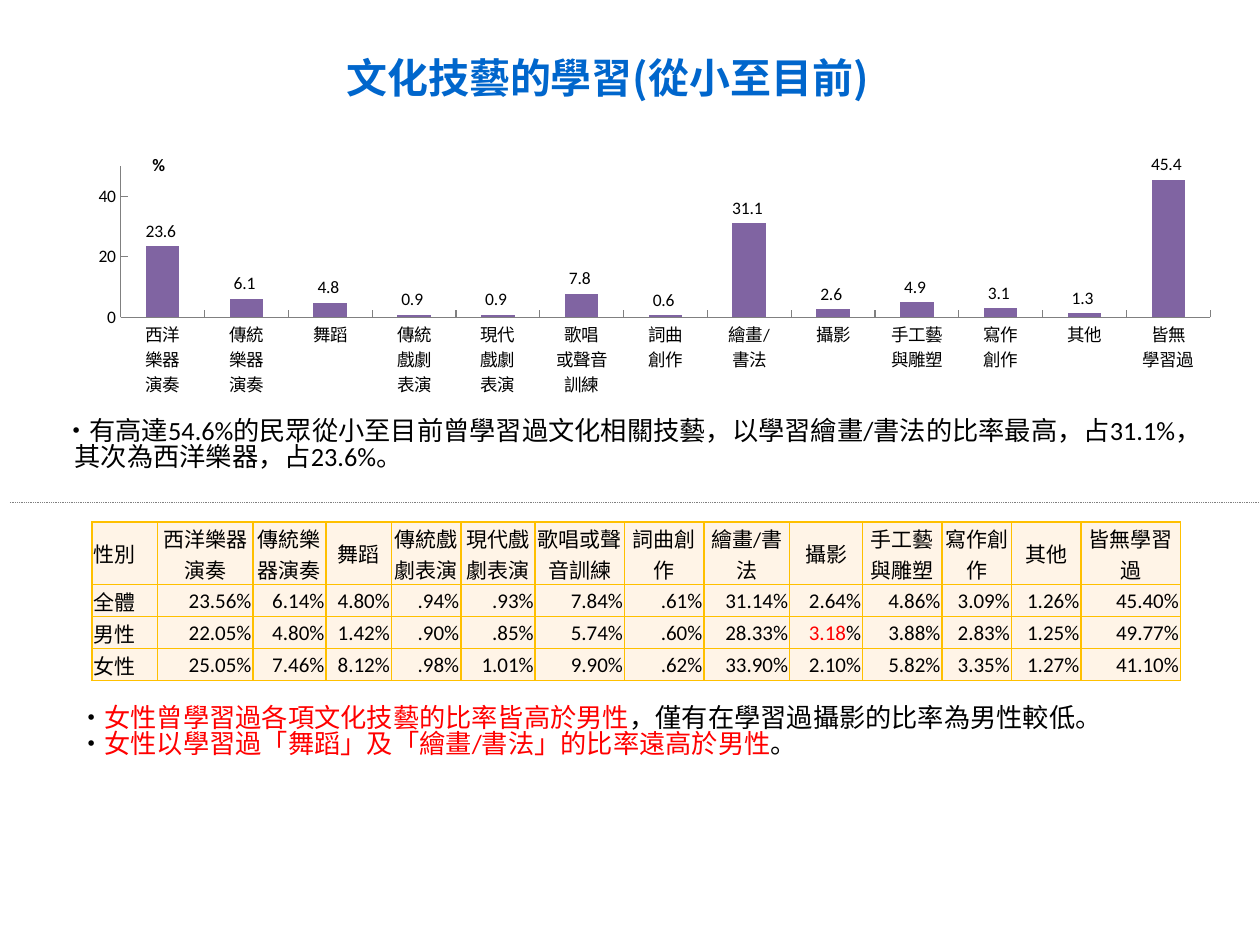
from lxml.etree import SubElement
from pptx import Presentation
from pptx.chart.data import CategoryChartData
from pptx.dml.color import RGBColor
from pptx.enum.chart import XL_CHART_TYPE as ChartType, XL_TICK_MARK as Tick
from pptx.enum.chart import XL_LABEL_POSITION as LabelPosition
from pptx.enum.dml import MSO_LINE as Dash
from pptx.enum.shapes import MSO_CONNECTOR as Connector
from pptx.enum.text import MSO_ANCHOR as Anchor, MSO_AUTO_SIZE as AutoSize, PP_ALIGN as Align
from pptx.oxml import parse_xml
from pptx.oxml.ns import nsdecls, qn
from pptx.util import Cm, Pt

BODY_FONT, TITLE_FONT = "Calibri", "Noto Sans CJK SC"
BLACK, RED, BLUE, PURPLE = "000000", "FF0000", "0066CC", "8064A2"
GREY, GOLD, CREAM = "808080", "FFC000", "FFF4E7"

SKILL_SHARES = {
    "西洋\n樂器\n演奏": 23.6, "傳統\n樂器\n演奏": 6.1, "舞蹈": 4.8,
    "傳統\n戲劇\n表演": 0.9, "現代\n戲劇\n表演": 0.9, "歌唱\n或聲音\n訓練": 7.8,
    "詞曲\n創作": 0.6, "繪畫/\n書法": 31.1, "攝影": 2.6, "手工藝\n與雕塑": 4.9,
    "寫作\n創作": 3.1, "其他": 1.3, "皆無\n學習過": 45.4,
}
GENDER_ROWS = [
    ["性別", "西洋樂器演奏", "傳統樂器演奏", "舞蹈", "傳統戲劇表演", "現代戲劇表演",
     "歌唱或聲音訓練", "詞曲創作", "繪畫/書法", "攝影", "手工藝與雕塑", "寫作創作",
     "其他", "皆無學習過"],
    ["全體", "23.56%", "6.14%", "4.80%", ".94%", ".93%", "7.84%", ".61%", "31.14%",
     "2.64%", "4.86%", "3.09%", "1.26%", "45.40%"],
    ["男性", "22.05%", "4.80%", "1.42%", ".90%", ".85%", "5.74%", ".60%", "28.33%",
     [("3.18", RED), ("%", BLACK)], "3.88%", "2.83%", "1.25%", "49.77%"],
    ["女性", "25.05%", "7.46%", "8.12%", ".98%", "1.01%", "9.90%", ".62%", "33.90%",
     "2.10%", "5.82%", "3.35%", "1.27%", "41.10%"],
]
COLUMN_WIDTHS = [1.32, 1.93, 1.47, 1.32, 1.4, 1.5, 1.8, 1.6, 1.73, 1.47, 1.6, 1.4, 1.4, 2.01]
ROW_HEIGHTS = [0.86, 0.43, 0.43, 0.43]


def rgb(color):
    return RGBColor.from_string(color)


def style_font(font, size, color=BLACK, name=BODY_FONT, bold=False):
    font.size, font.name, font.bold = Pt(size), name, bold
    font.color.rgb = rgb(color)


def write_text(para, text, align=None, color=BLACK, **style):
    """Fill a paragraph with a string or with (text, color) spans."""
    para.alignment = align
    for words, span_color in [(text, color)] if isinstance(text, str) else text:
        span = para.add_run()
        span.text = words
        style_font(span.font, color=span_color, **style)


def place(box, left, top, width, height):
    box.left, box.top, box.width, box.height = Cm(left), Cm(top), Cm(width), Cm(height)
    frame = box.text_frame
    frame.word_wrap, frame.auto_size = True, AutoSize.NONE
    return frame


def fill_title(box):
    frame = place(box, 3.76, 0.91, 16.97, 1.27)
    frame.vertical_anchor = Anchor.MIDDLE
    write_text(frame.paragraphs[0], "文化技藝的學習(從小至目前)", align=Align.CENTER,
               color=BLUE, size=23.4, name=TITLE_FONT, bold=True)


def fill_findings(box, position, findings):
    """Write hanging paragraphs that carry their own bullet sign."""
    frame = place(box, *position)
    for number, (text, align) in enumerate(findings):
        para = frame.add_paragraph() if number else frame.paragraphs[0]
        para.line_spacing, para.space_before = 0.82, Pt(0)
        write_text(para, text, align=align, size=15)
        props = para._p.get_or_add_pPr()
        props.set("marL", str(Cm(0.23)))
        props.set("indent", str(Cm(-0.23)))
        SubElement(props, qn("a:buNone"))


def set_layout(parent, index, **values):
    """Give a chart part a manual layout in fractions of the chart."""
    for old in parent.findall(qn("c:layout")):
        parent.remove(old)
    tags = "".join(f'<c:{tag} val="{value}"/>' for tag, value in values.items())
    parent.insert(index, parse_xml(
        f'<c:layout {nsdecls("c")}><c:manualLayout>{tags}</c:manualLayout></c:layout>'))


def add_share_chart(page):
    data = CategoryChartData()
    data.categories = list(SKILL_SHARES)
    data.add_series("Series 1", list(SKILL_SHARES.values()))
    chart = page.shapes.add_chart(ChartType.COLUMN_CLUSTERED, Cm(1.4), Cm(2.92),
                                  Cm(23.01), Cm(5.13), data).chart
    chart.has_legend = chart.has_title = False
    style_font(chart.font, size=10)

    # Columns and their labels
    plot = chart.plots[0]
    plot.gap_width, plot.vary_by_categories = 150, False
    fill = plot.series[0].format.fill
    fill.solid()
    fill.fore_color.rgb = rgb(PURPLE)
    plot.has_data_labels = True
    labels = plot.data_labels
    labels.show_value, labels.position = True, LabelPosition.OUTSIDE_END
    labels.number_format = r"#,##0.0_);[Red]\(#,##0.0\)"
    labels.number_format_is_linked = False
    style_font(labels.font, size=10)

    # Axes
    for axis in (chart.category_axis, chart.value_axis):
        axis.has_major_gridlines = False
        axis.major_tick_mark, axis.minor_tick_mark = Tick.INSIDE, Tick.NONE
        axis.format.line.color.rgb = rgb(GREY)
        axis.format.line.width = Pt(0.75)
        style_font(axis.tick_labels.font, size=10)
    scale = chart.value_axis
    scale.minimum_scale, scale.maximum_scale, scale.major_unit = 0, 50, 20
    unit = scale.axis_title
    write_text(unit.text_frame.paragraphs[0], "%", size=10, bold=True)
    unit._element.find(".//" + qn("a:bodyPr")).set("rot", "0")

    # Positions inside the chart
    set_layout(unit._element, 1, xMode="edge", yMode="edge", x=0.07, y=0.02)
    set_layout(chart._chartSpace.chart.plotArea, 0, layoutTarget="inner", xMode="edge",
               yMode="edge", x=0.045, y=0.083, w=0.955, h=0.595)


def add_divider(page):
    divider = page.shapes.add_connector(Connector.STRAIGHT, Cm(0.2), Cm(10.13),
                                        Cm(25.6), Cm(10.13))
    divider.line.color.rgb = rgb(GREY)
    divider.line.width = Pt(0.5)
    divider.line.dash_style = Dash.ROUND_DOT
    SubElement(divider._element.spPr, qn("a:effectLst"))


def style_cell(cell):
    cell.margin_left = cell.margin_right = cell.margin_top = Cm(0.03)
    cell.margin_bottom = 0
    cell.vertical_anchor = Anchor.MIDDLE
    props = cell._tc.get_or_add_tcPr()
    for side in "LRTB":
        border = SubElement(props, qn(f"a:ln{side}"), w=str(Pt(1)))
        SubElement(SubElement(border, qn("a:solidFill")), qn("a:srgbClr"), val=GOLD)
    cell.fill.solid()
    cell.fill.fore_color.rgb = rgb(CREAM)


def add_gender_table(page):
    table = page.shapes.add_table(len(GENDER_ROWS), len(COLUMN_WIDTHS), Cm(1.85), Cm(10.52),
                                  Cm(sum(COLUMN_WIDTHS)), Cm(sum(ROW_HEIGHTS))).table
    table.first_row = table.horz_banding = False
    for column, width in zip(table.columns, COLUMN_WIDTHS):
        column.width = Cm(width)
    for row, height, texts in zip(table.rows, ROW_HEIGHTS, GENDER_ROWS):
        row.height = Cm(height)
        value_align = Align.CENTER if texts is GENDER_ROWS[0] else Align.RIGHT
        for number, (cell, text) in enumerate(zip(row.cells, texts)):
            style_cell(cell)
            write_text(cell.text_frame.paragraphs[0], text, size=12,
                       align=value_align if number else Align.LEFT)


def main():
    deck = Presentation()
    deck.slide_width, deck.slide_height = Cm(25.4), Cm(19.05)
    page = deck.slides.add_slide(deck.slide_layouts.get_by_name("Two Content"))
    title, overall, by_gender = page.placeholders

    # Overall shares
    fill_title(title)
    add_share_chart(page)
    fill_findings(overall, (1.02, 8.33, 23.6, 1.52), [
        ("•有高達54.6%的民眾從小至目前曾學習過文化相關技藝，以學習繪畫/書法的比率最高，"
         "占31.1%，其次為西洋樂器，占23.6%。", Align.LEFT)])
    add_divider(page)

    # Shares by gender
    add_gender_table(page)
    fill_findings(by_gender, (1.32, 14.12, 23.6, 2.31), [
        ([("•", BLACK), ("女性曾學習過各項文化技藝的比率皆高於男性", RED),
          ("，僅有在學習過攝影的比率為男性較低。", BLACK)], Align.LEFT),
        ([("•", BLACK), ("女性以學習過「舞蹈」及「繪畫/書法」的比率遠高於男性", RED),
          ("。", BLACK)], Align.JUSTIFY)])
    deck.save("out.pptx")


if __name__ == "__main__":
    main()
